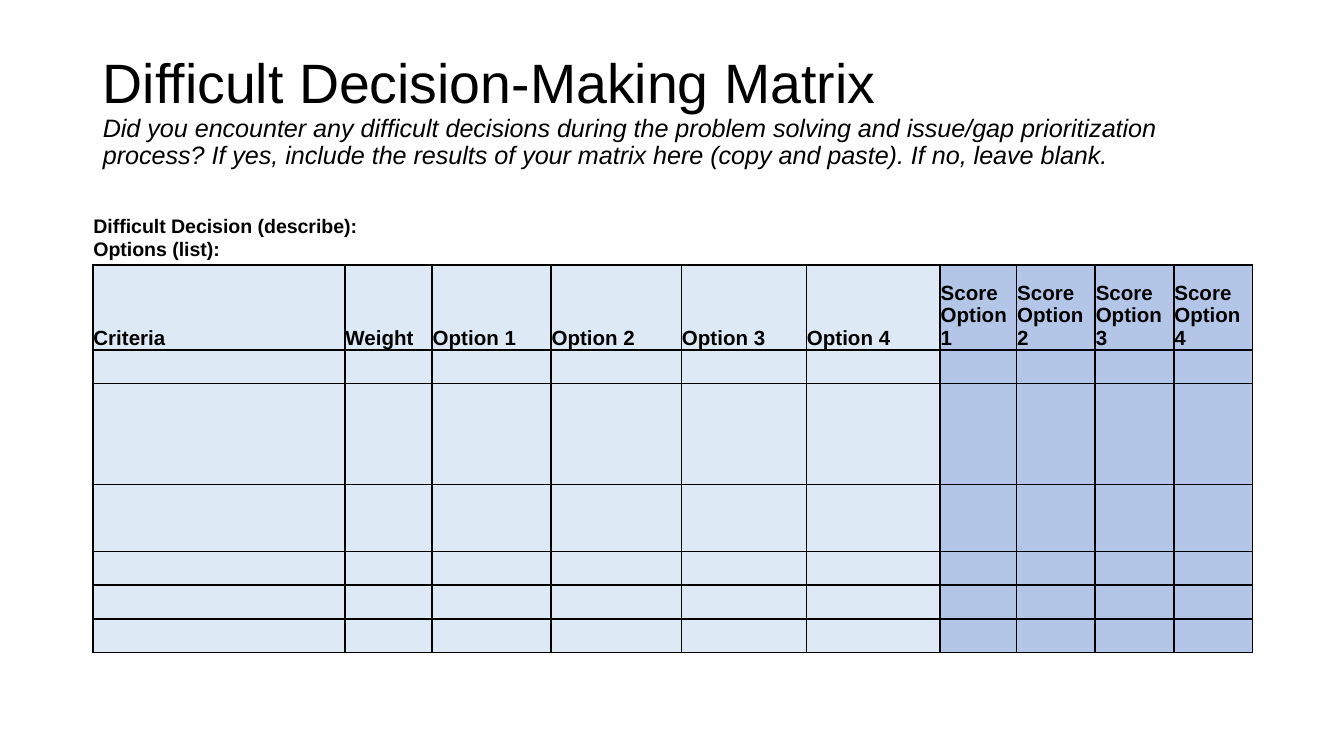
from dataclasses import dataclass

from lxml.etree import SubElement
from pptx import Presentation
from pptx.dml.color import RGBColor as Color
from pptx.enum.text import MSO_ANCHOR as Anchor, MSO_AUTO_SIZE as AutoSize
from pptx.oxml.ns import qn
from pptx.util import Emu, Pt

EMU_PER_PX = 4572


@dataclass(frozen=True)
class Theme:
    font: str = "Arial"
    ink: str = "000000"
    criteria_fill: str = "DDEAF6"
    score_fill: str = "B3C6E7"
    title_size: float = 29.7
    prompt_size: float = 13.5
    label_size: float = 10.5
    cell_size: float = 11
    border: float = 1


THEME = Theme()
TITLE = "Difficult Decision-Making Matrix "
PROMPT = (
    "Did you encounter any difficult decisions during the problem solving and "
    "issue/gap prioritization process? If yes, include the results of your "
    "matrix here (copy and paste). If no, leave blank."
)
LABELS = ["Difficult Decision (describe):", "Options (list):"]
OPTIONS = [f"Option {number}" for number in range(1, 5)]
SCORES = [f"Score {option}" for option in OPTIONS]
HEADERS = ["Criteria", "Weight", *OPTIONS, *SCORES]
COLUMN_WIDTHS = [375, 130, 177, 194, 186, 199, 114, 117, 117, 117]
ROW_HEIGHTS = [127, 50, 150, 100, 50, 50, 50]


def px(length):
    return Emu(length * EMU_PER_PX)


def style_span(span, size, bold=False, italic=False):
    font = span.font
    font.name = THEME.font
    font.size = Pt(size)
    font.bold = bold
    font.italic = italic
    font.color.rgb = Color.from_string(THEME.ink)


def set_margins(target, left, top, right, bottom):
    target.margin_left, target.margin_top = px(left), px(top)
    target.margin_right, target.margin_bottom = px(right), px(bottom)


def add_text_box(page, left, top, width, height, text):
    box = page.shapes.add_textbox(px(left), px(top), px(width), px(height))
    frame = box.text_frame
    frame.word_wrap = True
    set_margins(frame, 15, 8, 15, 8)
    frame.text = text
    return frame


def add_title(page):
    frame = add_text_box(page, 138, 60, 1724, 217, f"{TITLE}\v{PROMPT}")
    frame.vertical_anchor = Anchor.MIDDLE
    para = frame.paragraphs[0]
    para.line_spacing = 0.9
    title, prompt = para.runs
    style_span(title, THEME.title_size)
    style_span(prompt, THEME.prompt_size, italic=True)


def add_labels(page):
    frame = add_text_box(page, 124, 310, 1710, 86, "\n".join(LABELS))
    frame.auto_size = AutoSize.SHAPE_TO_FIT_TEXT
    for para in frame.paragraphs:
        style_span(para.runs[0], THEME.label_size, bold=True)


def add_borders(cell):
    properties = cell._tc.get_or_add_tcPr()
    for side in ("lnL", "lnR", "lnT", "lnB"):
        line = SubElement(properties, qn(f"a:{side}"), w=str(Pt(THEME.border)))
        fill = SubElement(line, qn("a:solidFill"))
        SubElement(fill, qn("a:srgbClr"), val=THEME.ink)


def format_cell(cell, text, fill):
    add_borders(cell)
    cell.fill.solid()
    cell.fill.fore_color.rgb = Color.from_string(fill)
    cell.vertical_anchor = Anchor.BOTTOM
    set_margins(cell, 1, 1, 1, 0)
    para = cell.text_frame.paragraphs[0]
    if text:
        para.text = text
        style_span(para.runs[0], THEME.cell_size, bold=True)
    else:
        SubElement(para._p, qn("a:endParaRPr"), sz=str(THEME.cell_size * 100))


def add_matrix(page):
    frame = page.shapes.add_table(
        len(ROW_HEIGHTS), len(COLUMN_WIDTHS), px(138), px(394),
        px(sum(COLUMN_WIDTHS)), px(sum(ROW_HEIGHTS)),
    )
    table = frame.table
    table.first_row = False
    table.horz_banding = False
    for column, width in zip(table.columns, COLUMN_WIDTHS):
        column.width = px(width)
    for row_index, (row, height) in enumerate(zip(table.rows, ROW_HEIGHTS)):
        row.height = px(height)
        for cell, header in zip(row.cells, HEADERS):
            text = header if row_index == 0 else ""
            fill = THEME.score_fill if header in SCORES else THEME.criteria_fill
            format_cell(cell, text, fill)


def main():
    deck = Presentation()
    deck.slide_width, deck.slide_height = px(2000), px(1125)
    page = deck.slides.add_slide(deck.slide_layouts[6])
    add_title(page)
    add_matrix(page)
    add_labels(page)
    deck.save("out.pptx")


if __name__ == "__main__":
    main()
